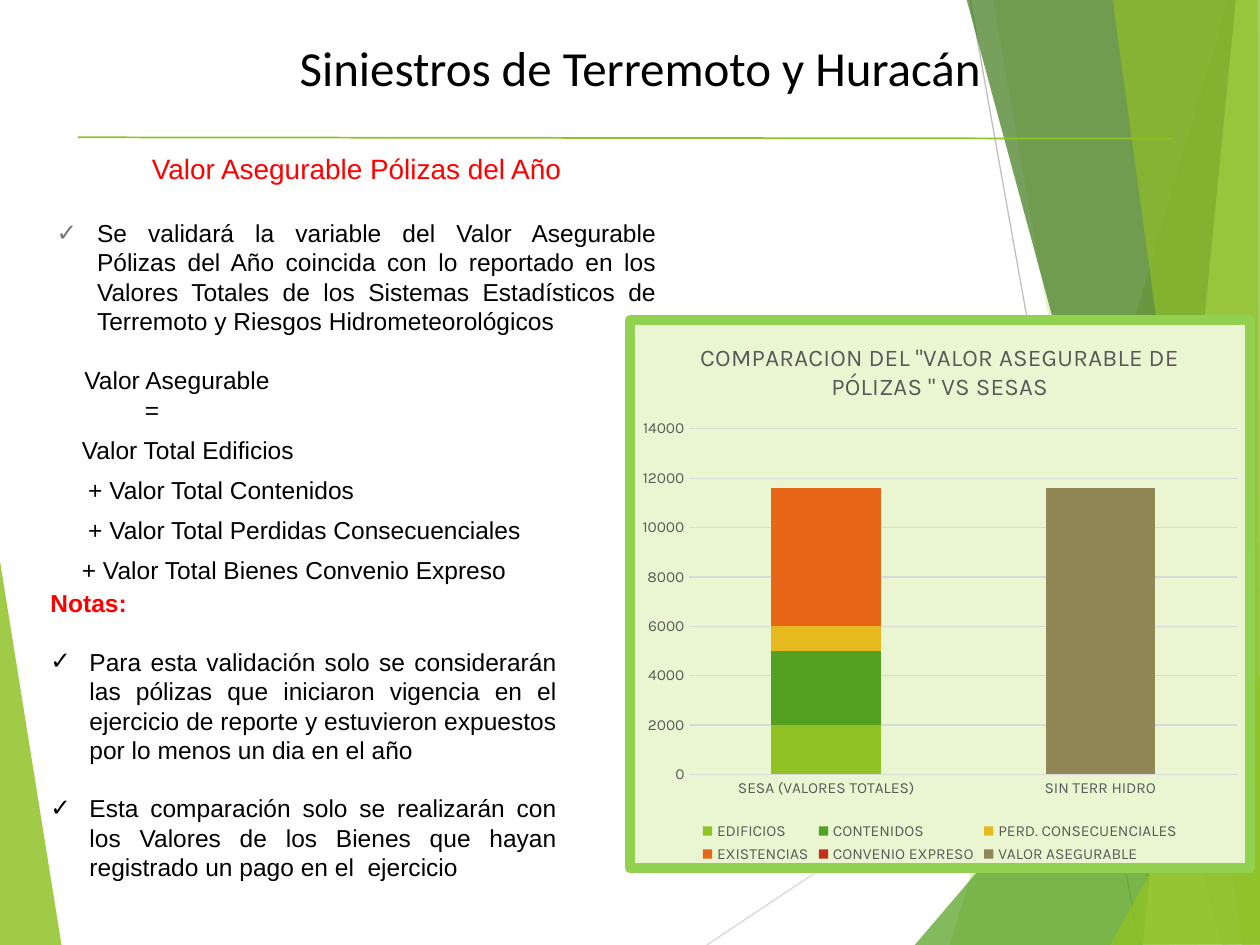
from lxml.etree import SubElement
from pptx import Presentation
from pptx.chart.data import CategoryChartData
from pptx.dml.color import RGBColor
from pptx.enum.chart import XL_CHART_TYPE, XL_LEGEND_POSITION, XL_TICK_MARK
from pptx.enum.shapes import MSO_CONNECTOR
from pptx.enum.text import MSO_ANCHOR, MSO_AUTO_SIZE, PP_ALIGN
from pptx.oxml import parse_xml
from pptx.oxml.ns import nsdecls, qn
from pptx.util import Inches, Pt

LIME = RGBColor(0x90, 0xC2, 0x26)
GREEN = RGBColor(0x54, 0xA0, 0x21)
FOREST = RGBColor(0x3F, 0x78, 0x19)
PALE = RGBColor(0xC0, 0xE4, 0x74)
YELLOW = RGBColor(0xE6, 0xB9, 0x1E)
ORANGE = RGBColor(0xE7, 0x66, 0x18)
BRICK = RGBColor(0xC4, 0x2F, 0x1A)
OLIVE = RGBColor(0x91, 0x86, 0x55)
RED = RGBColor(0xFF, 0x00, 0x00)
BLACK = RGBColor(0x00, 0x00, 0x00)
SILVER = RGBColor(0xD9, 0xD9, 0xD9)
GRAY = RGBColor(0xBF, 0xBF, 0xBF)
TICK = RGBColor(0x76, 0x76, 0x76)
DARK = RGBColor(0x59, 0x59, 0x59)

prs = Presentation()
prs.slide_width, prs.slide_height = Inches(10), Inches(7.5)
s = prs.slides.add_slide(prs.slide_layouts[3])
title, body, notes = s.placeholders


def add_line(start, end, color, width):
    line = s.shapes.add_connector(MSO_CONNECTOR.STRAIGHT, *map(Inches, start + end))
    line.line.color.rgb = color
    line.line.width = Pt(width)
    SubElement(line._element.spPr, qn("a:effectLst"))


def write(sp, box, rows):
    s.shapes._spTree.append(sp._element)
    sp.left, sp.top, sp.width, sp.height = map(Inches, box)
    tf = sp.text_frame
    tf.word_wrap = True
    tf.auto_size = MSO_AUTO_SIZE.NONE
    tf.vertical_anchor = MSO_ANCHOR.TOP
    tf.text = "\n".join(row[0] for row in rows)
    for p, (_, size, color, align, before, indent, tick) in zip(tf.paragraphs, rows):
        p.alignment = align
        p.space_before = Pt(before)
        f = p.runs[0].font
        f.size, f.color.rgb, f.name = Pt(size), color, "Arial"
        pPr = p._p.get_or_add_pPr()
        pPr.set("marL", str(Inches(indent)))
        pPr.set("indent", str(Inches(-indent if tick else 0)))
        if tick:
            buClr = SubElement(pPr, qn("a:buClr"))
            SubElement(buClr, qn("a:srgbClr"), val=str(tick))
            SubElement(pPr, qn("a:buFont"), typeface="Arial")
            SubElement(pPr, qn("a:buChar"), char="✓")
        else:
            SubElement(pPr, qn("a:buNone"))


decor = [
    (LIME, 85, [(-0.01, 4.39), (0.49, 7.51), (-0.01, 7.5)]),
    (SILVER, 100, [(5.61, 7.5), (10.01, 4.57)]),
    (GRAY, 100, [(7.7, 0), (9.04, 7.5)]),
    (LIME, 30, [(9.75, 0), (7.54, 7.5), (10.02, 7.51), (10.01, 0.01)]),
    (LIME, 20, [(7.88, -0.01), (9.19, 7.5), (10.01, 7.5), (10.01, -0.01)]),
    (GREEN, 72, [(7.26, 7.5), (10, 4.29), (10.01, 7.5)]),
    (FOREST, 70, [(7.67, -0.01), (9.7, 7.5), (10.01, 7.49), (10.01, -0.01)]),
    (PALE, 70, [(9.81, -0.01), (9.07, 7.5), (10.01, 7.5), (10, -0.01)]),
    (LIME, 65, [(8.83, -0.01), (9.86, 7.5), (10, 7.5), (9.98, -0.01)]),
    (LIME, 80, [(8.81, 7.5), (10.01, 5.35), (10.01, 7.49)]),
]
for color, opacity, points in decor:
    if len(points) == 2:
        add_line(*points, color, 0.75)
        continue
    corners = [(Inches(x), Inches(y)) for x, y in points]
    builder = s.shapes.build_freeform(*corners[0])
    builder.add_line_segments(corners[1:], close=True)
    sp = builder.convert_to_shape()
    sp.shadow.inherit = False
    sp.fill.solid()
    sp.fill.fore_color.rgb = color
    sp.line.fill.background()
    clr = sp._element.spPr.find(".//" + qn("a:srgbClr"))
    SubElement(clr, qn("a:alpha"), val=str(opacity * 1000))

CENTER, JUSTIFY, LEFT = PP_ALIGN.CENTER, PP_ALIGN.JUSTIFY, PP_ALIGN.LEFT
write(title, (1.41, 0.25, 7.34, 0.57),
      [("Siniestros de Terremoto y Huracán", 28, BLACK, CENTER, 0, 0, None)])
title.text_frame.paragraphs[0].runs[0].font.name = "Calibri"

add_line((0.62, 1.09), (9.3, 1.1), LIME, 1)

write(body, (0.35, 1.15, 4.96, 3.57), [
    ("Valor Asegurable Pólizas del Año", 16, RED, CENTER, 0, 0, None),
    ("Se validará la variable del Valor Asegurable Pólizas del Año coincida con lo "
     "reportado en los Valores Totales de los Sistemas Estadísticos de Terremoto y "
     "Riesgos Hidrometeorológicos", 14, BLACK, JUSTIFY, 19, 0.32, TICK),
    ("Valor Asegurable", 14, BLACK, JUSTIFY, 17, 0.22, None),
    ("=", 14, BLACK, JUSTIFY, 0, 0.7, None),
    ("Valor Total Edificios", 14, BLACK, JUSTIFY, 6, 0.2, None),
    ("+ Valor Total Contenidos", 14, BLACK, JUSTIFY, 6, 0.25, None),
    ("+ Valor Total Perdidas Consecuenciales", 14, BLACK, JUSTIFY, 6, 0.25, None),
    ("+ Valor Total Bienes Convenio Expreso", 14, BLACK, JUSTIFY, 6, 0.2, None),
])

data = CategoryChartData()
data.categories = ["SESA (VALORES TOTALES)", "SIN TERR HIDRO"]
series = [
    ("EDIFICIOS", (2000, None), LIME),
    ("CONTENIDOS", (3000, None), GREEN),
    ("PERD. CONSECUENCIALES", (1000, None), YELLOW),
    ("EXISTENCIAS", (5600, None), ORANGE),
    ("CONVENIO EXPRESO", (None, None), BRICK),
    ("VALOR ASEGURABLE", (None, 11600), OLIVE),
]
for name, values, _ in series:
    data.add_series(name, values)
chart = s.shapes.add_chart(XL_CHART_TYPE.COLUMN_STACKED, Inches(4.96), Inches(2.5),
                           Inches(5), Inches(4.43), data).chart
chart.font.name, chart.font.size, chart.font.color.rgb = "Karla", Pt(10), BLACK
chart._chartSpace.find(qn("c:txPr")).addprevious(parse_xml(
    f'<c:spPr {nsdecls("c", "a")}><a:solidFill><a:srgbClr val="EAF6D1"/></a:solidFill>'
    '<a:ln w="76200"><a:solidFill><a:srgbClr val="92D050"/></a:solidFill></a:ln></c:spPr>'))

chart.has_title = True
chart.chart_title.include_in_layout = False
tf = chart.chart_title.text_frame
tf.text = 'COMPARACION DEL "VALOR ASEGURABLE DE PÓLIZAS " VS SESAS'
r = tf.paragraphs[0].runs[0]
r.font.name, r.font.size, r.font.bold, r.font.color.rgb = "Karla", Pt(14), False, DARK

chart.has_legend = True
chart.legend.position = XL_LEGEND_POSITION.BOTTOM
chart.legend.include_in_layout = False
for part in (chart.legend.font, chart.category_axis.tick_labels.font,
             chart.value_axis.tick_labels.font):
    part.name, part.size, part.color.rgb = "Karla", Pt(9), DARK
for axis in (chart.category_axis, chart.value_axis):
    axis.major_tick_mark = axis.minor_tick_mark = XL_TICK_MARK.NONE
    axis.format.line.fill.background()
grid = chart.value_axis.major_gridlines.format.line
grid.color.rgb, grid.width = SILVER, Pt(0.75)

plot = chart.plots[0]
plot.gap_width, plot.overlap, plot.vary_by_categories = 150, 100, False
for bar, (_, _, color) in zip(plot.series, series):
    bar.format.fill.solid()
    bar.format.fill.fore_color.rgb = color

write(notes, (0.3, 4.62, 4.22, 2.46), [
    ("Notas:", 14, RED, LEFT, 0, 0, None),
    ("Para esta validación solo se considerarán las pólizas que iniciaron vigencia en el "
     "ejercicio de reporte y estuvieron expuestos por lo menos un dia en el año",
     14, BLACK, JUSTIFY, 16.5, 0.31, BLACK),
    ("Esta comparación solo se realizarán con los Valores de los Bienes que hayan "
     "registrado un pago en el  ejercicio", 14, BLACK, JUSTIFY, 16.5, 0.31, BLACK),
])
notes.text_frame.paragraphs[0].runs[0].font.bold = True

prs.save("out.pptx")
